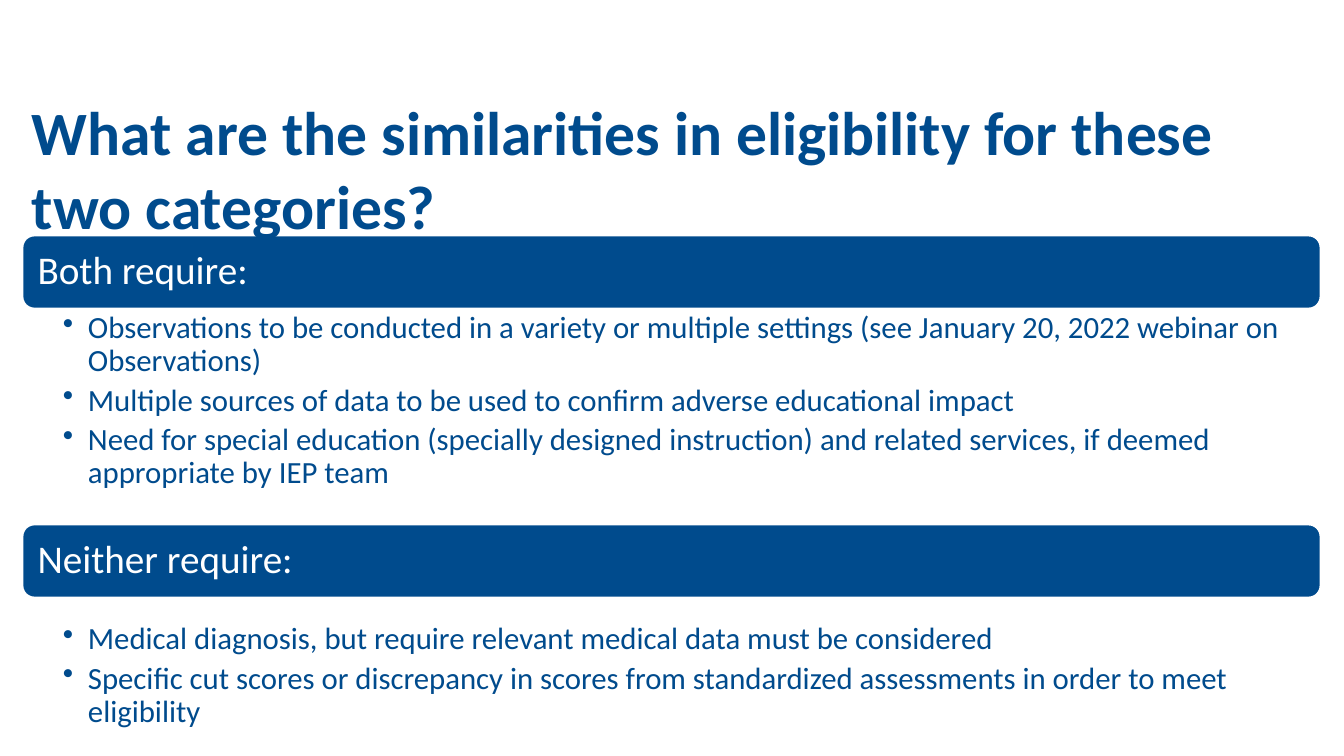
from lxml import etree
from pptx import Presentation
from pptx.dml.color import RGBColor
from pptx.enum.shapes import MSO_SHAPE
from pptx.enum.text import MSO_ANCHOR, PP_ALIGN
from pptx.oxml.ns import qn
from pptx.util import Pt

PX = 914400 / 100.8
COLORS = {"blue": "004B8D", "white": "FFFFFF"}
LEFT, WIDTH, BAR_HEIGHT = 22, 1299, 74

SECTIONS = [
    ("Both require:", 235, 308, 237, [
        "Observations to be conducted in a variety or multiple settings (see January 20, 2022 webinar on Observations)",
        "Multiple sources of data to be used to confirm adverse educational impact",
        "Need for special education (specially designed instruction) and related services, if deemed appropriate by IEP team",
    ]),
    ("Neither require:", 524, 619, 118, [
        "Medical diagnosis, but require relevant medical data must be considered",
        "Specific cut scores or discrepancy in scores from standardized assessments in order to meet eligibility",
    ]),
]


def px(*values):
    return [round(v * PX) for v in values]


def style(p, size, color, bold=False):
    p.alignment = PP_ALIGN.LEFT
    for r in p.runs:
        r.font.name = "Calibri"
        r.font.size = Pt(size)
        r.font.bold = bold
        r.font.color.rgb = RGBColor.from_string(COLORS[color])


prs = Presentation()
prs.slide_width, prs.slide_height = px(1344, 756)
s = prs.slides.add_slide(prs.slide_layouts[6])

for heading, bar_top, list_top, list_height, items in SECTIONS:
    bar = s.shapes.add_shape(MSO_SHAPE.ROUNDED_RECTANGLE, *px(LEFT, bar_top, WIDTH, BAR_HEIGHT))
    bar.shadow.inherit = False
    bar.fill.solid()
    bar.fill.fore_color.rgb = RGBColor.from_string(COLORS["blue"])
    bar.line.color.rgb = RGBColor.from_string(COLORS["white"])
    bar.line.width = Pt(2)
    tf = bar.text_frame
    tf.vertical_anchor = MSO_ANCHOR.MIDDLE
    tf.margin_left, tf.margin_top, tf.margin_right, tf.margin_bottom = px(12, 12, 12, 12)
    tf.text = heading
    tf.paragraphs[0].line_spacing = 0.9
    style(tf.paragraphs[0], 28, "white")

    tf = s.shapes.add_textbox(*px(LEFT, list_top, WIDTH, list_height)).text_frame
    tf.word_wrap = True
    tf.margin_left, tf.margin_top, tf.margin_right, tf.margin_bottom = px(41, 4, 22, 4)
    tf.text = "\n".join(items)
    for p in tf.paragraphs:
        pPr = p._p.get_or_add_pPr()
        indent = px(25)[0]
        pPr.set("marL", str(indent))
        pPr.set("indent", str(-indent))
        etree.SubElement(pPr, qn("a:buChar")).set("char", "•")
        p.line_spacing = 0.9
        p.space_after = Pt(4.4)
        style(p, 22, "blue")

tf = s.shapes.add_textbox(*px(LEFT, 109, WIDTH, 118)).text_frame
tf.word_wrap = True
tf.vertical_anchor = MSO_ANCHOR.MIDDLE
tf.text = "What are the similarities in eligibility for these two categories?"
style(tf.paragraphs[0], 44, "blue", True)

prs.save("out.pptx")
